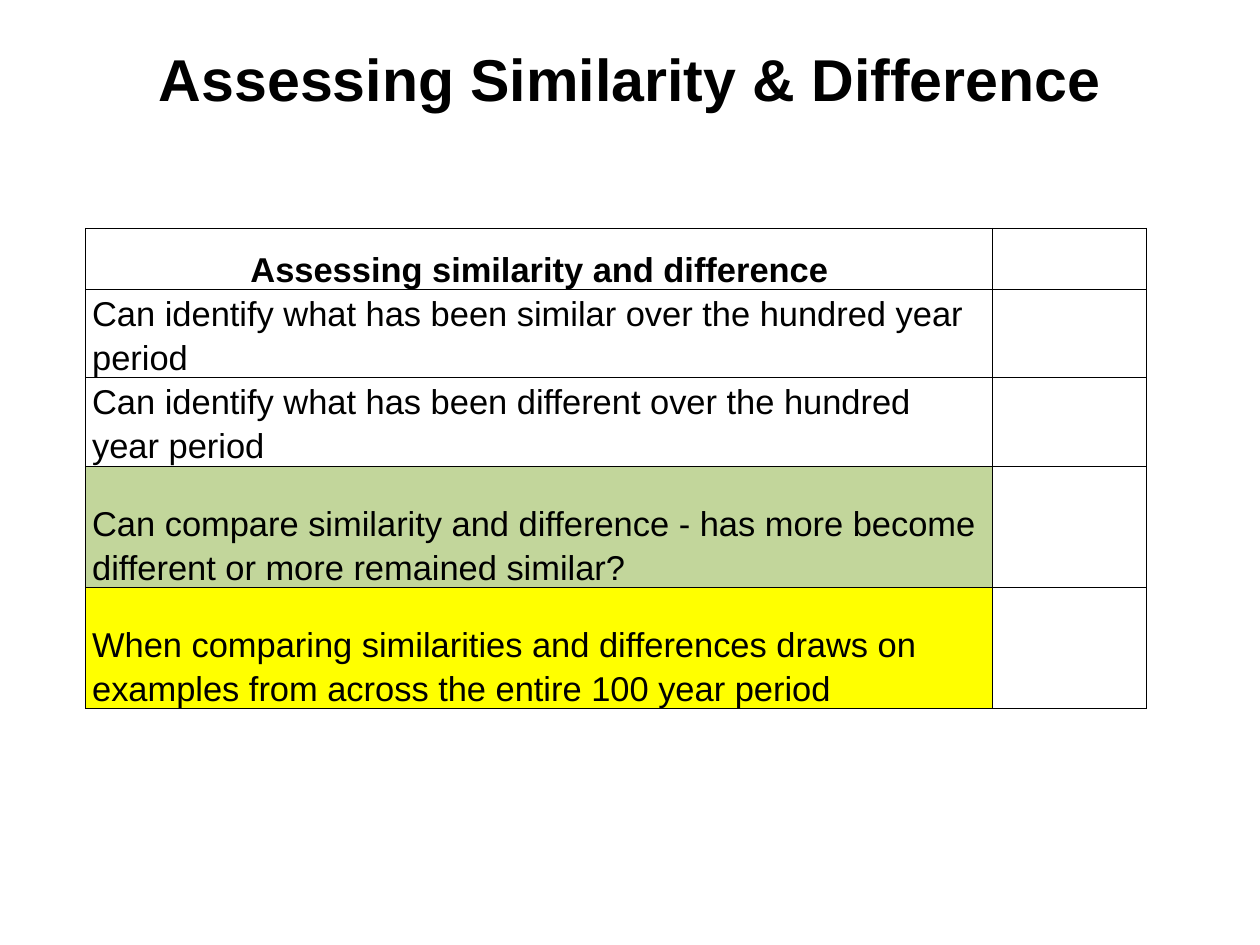
"""Build the slide on assessing similarity and difference."""
import lxml.etree
import pptx
import pptx.dml.color
import pptx.enum.text
import pptx.oxml.ns
import pptx.util

SCALE = 9144
ALIGN = pptx.enum.text.PP_ALIGN
ANCHOR = pptx.enum.text.MSO_ANCHOR


def px(length):
    """Turn px, 100 to the inch, into EMU."""
    return pptx.util.Emu(length * SCALE)


def color(hex_string):
    """Turn a hex string into a colour."""
    return pptx.dml.color.RGBColor.from_string(hex_string)


def set_attributes(target, values):
    """Set each named attribute of the target."""
    for name, value in values.items():
        setattr(target, name, value)


class SlideBuilder:
    """Hold the style and the current slide."""

    font_name = "Arial"
    ink = "000000"
    border_width = pptx.util.Pt(1)

    def __init__(self, presentation):
        """Add a title-only slide."""
        self.slide = presentation.slides.add_slide(presentation.slide_layouts[5])

    def add_text(self, frame, text, size, bold, alignment, line_spacing):
        """Fill the first paragraph with formatted text."""
        paragraph = frame.paragraphs[0]
        set_attributes(paragraph, {"alignment": alignment, "line_spacing": line_spacing})
        run = paragraph.add_run()
        run.text = text
        set_attributes(run.font, {"name": self.font_name, "size": pptx.util.Pt(size), "bold": bold})
        run.font.color.rgb = color(self.ink)

    def title(self, text, left, top, width, height):
        """Place and fill the title placeholder."""
        shape = self.slide.shapes.title
        set_attributes(shape, {"left": px(left), "top": px(top), "width": px(width), "height": px(height)})
        set_attributes(shape.text_frame, {
            "vertical_anchor": ANCHOR.TOP,
            "auto_size": pptx.enum.text.MSO_AUTO_SIZE.NONE,
            "word_wrap": True,
        })
        self.add_text(shape.text_frame, text, 48, True, ALIGN.CENTER, 1.0)

    def border(self, cell):
        """Draw a solid line on every side of a cell."""
        properties = cell._tc.get_or_add_tcPr()
        qn = pptx.oxml.ns.qn
        for side in ("L", "R", "T", "B"):
            line = lxml.etree.SubElement(properties, qn(f"a:ln{side}"), w=str(self.border_width))
            fill = lxml.etree.SubElement(line, qn("a:solidFill"))
            lxml.etree.SubElement(fill, qn("a:srgbClr"), val=self.ink)

    def table(self, rows, left, top, column_widths):
        """Add a bordered table with text in its first column."""
        height = sum(row_height for _, row_height, _ in rows)
        table = self.slide.shapes.add_table(
            len(rows), len(column_widths), px(left), px(top), px(sum(column_widths)), px(height)
        ).table
        set_attributes(table, {"first_row": False, "horz_banding": False})
        for column, width in zip(table.columns, column_widths):
            column.width = px(width)
        for index, (text, row_height, fill) in enumerate(rows):
            table.rows[index].height = px(row_height)
            for cell in table.rows[index].cells:
                self.border(cell)
                cell.fill.background()
            cell = table.cell(index, 0)
            set_attributes(cell, {
                "margin_left": px(7), "margin_right": px(7), "margin_top": 0, "margin_bottom": 0,
                "vertical_anchor": ANCHOR.BOTTOM,
            })
            if fill:
                cell.fill.solid()
                cell.fill.fore_color.rgb = color(fill)
            is_header = index == 0
            self.add_text(cell.text_frame, text, 28, is_header, ALIGN.CENTER if is_header else ALIGN.LEFT, 1.15)


def main():
    """Build and save the presentation."""
    presentation = pptx.Presentation()
    set_attributes(presentation, {"slide_width": px(1422), "slide_height": px(1067)})
    builder = SlideBuilder(presentation)
    builder.title("Assessing Similarity & Difference", 71, 43, 1280, 178)
    criteria = [
        ("Assessing similarity and difference", 69, None),
        ("Can identify what has been similar over the hundred year period", 69, None),
        ("Can identify what has been different over the hundred year period", 69, None),
        ("Can compare similarity and difference - has more become different or more remained similar?",
         137, "C2D69B"),
        ("When comparing similarities and differences draws on examples from across the entire 100 year period",
         137, "FFFF00"),
    ]
    builder.table(criteria, 97, 258, [1023, 174])
    presentation.save("out.pptx")


if __name__ == "__main__":
    main()
